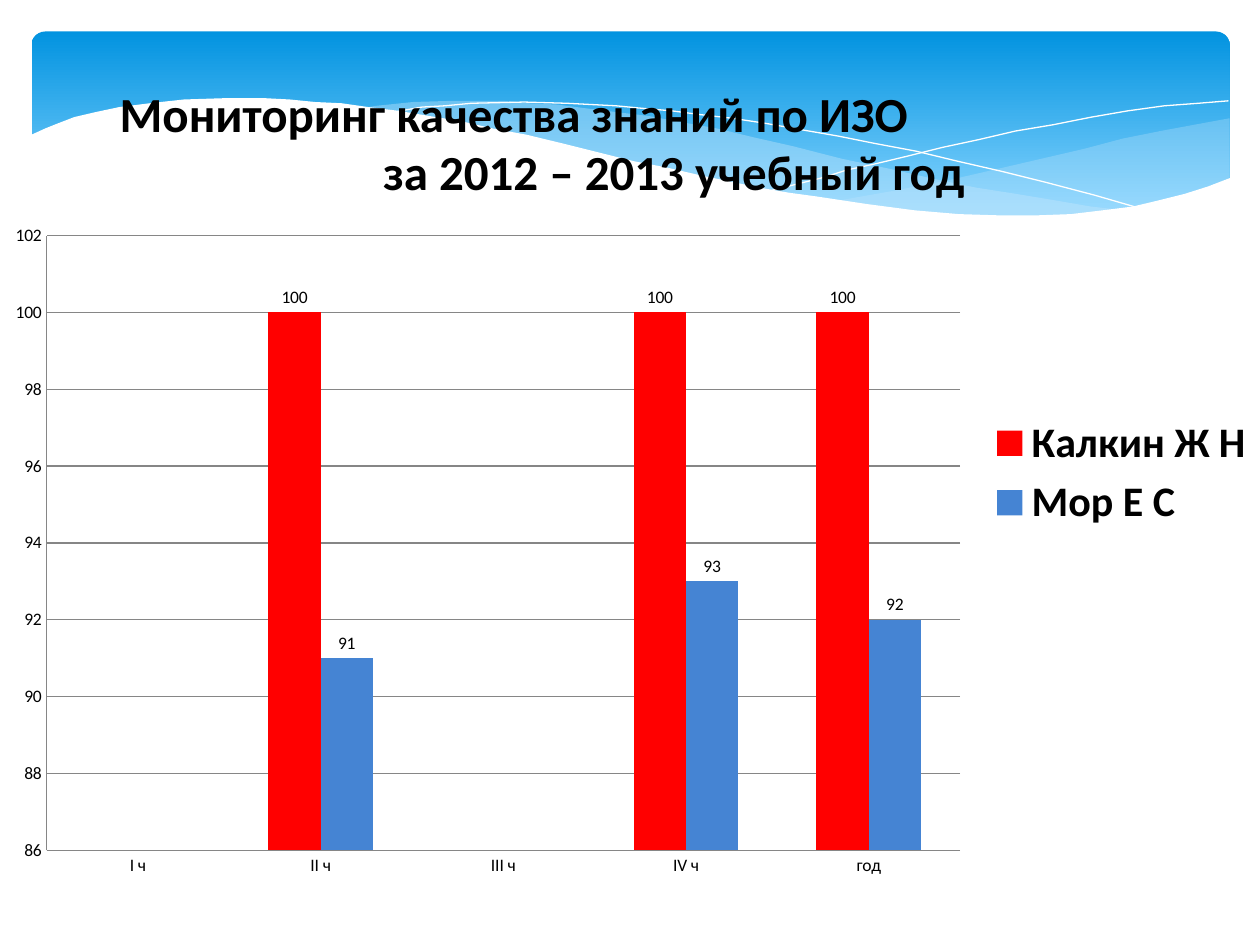
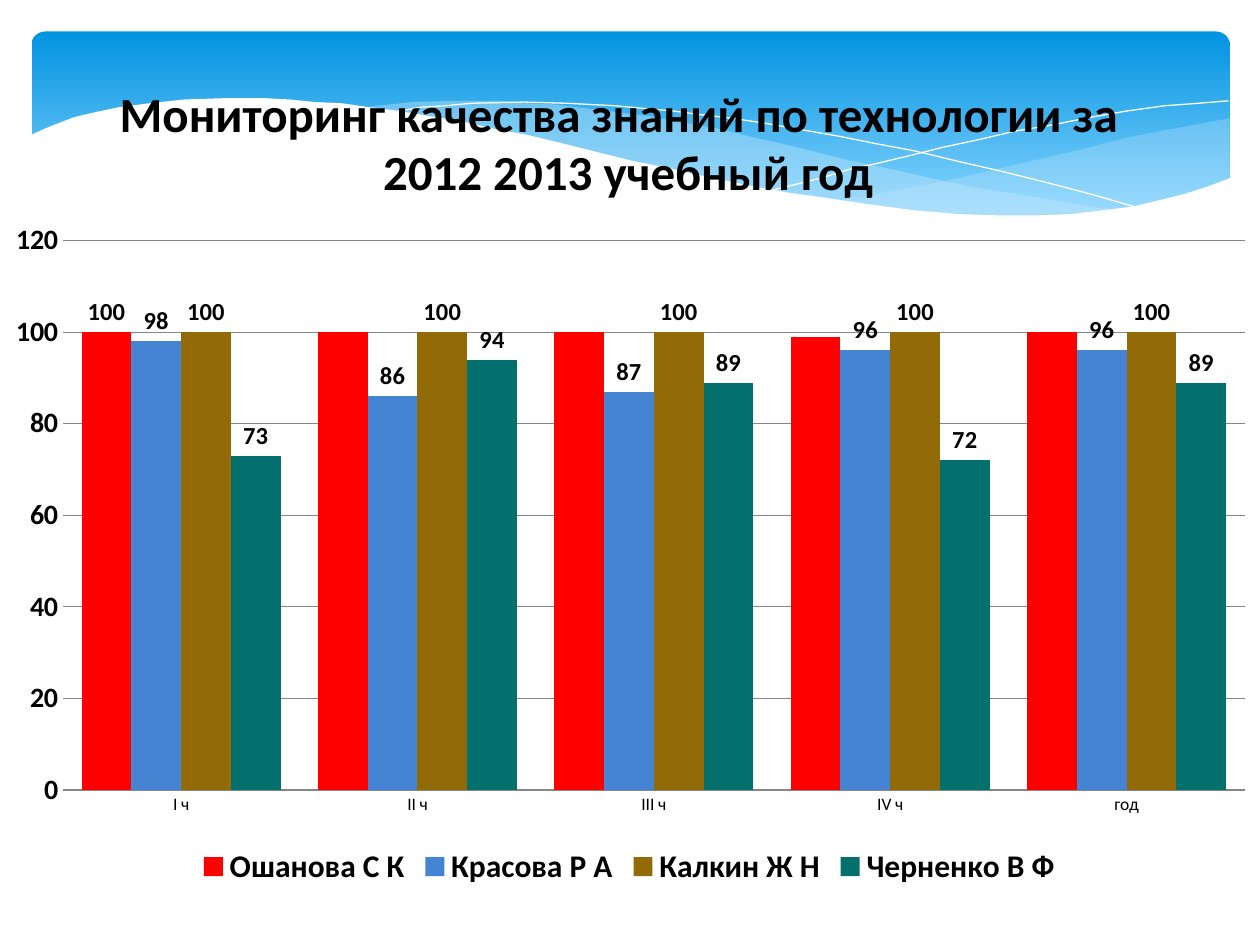
from dataclasses import dataclass

from lxml.etree import SubElement
from pptx import Presentation
from pptx.chart.data import CategoryChartData
from pptx.dml.color import RGBColor
from pptx.enum.chart import XL_CHART_TYPE, XL_LABEL_POSITION, XL_LEGEND_POSITION, XL_TICK_MARK
from pptx.enum.shapes import MSO_SHAPE
from pptx.oxml import parse_xml
from pptx.oxml.ns import nsdecls, qn
from pptx.util import Inches, Pt


@dataclass(frozen=True)
class Theme:
    """Colours, font and type sizes of the deck."""
    font: str = "Calibri"
    text: str = "000000"
    white: str = "FFFFFF"
    band_top: str = "0293E0"
    band_bottom: str = "83D3FE"
    ribbon: str = "C6E7FC"
    grid: str = "868686"
    red: str = "FF0000"
    blue: str = "4584D3"
    brown: str = "936A08"
    teal: str = "03706E"
    title_size: int = 28
    body_size: int = 10
    label_size: int = 14
    axis_size: int = 16


THEME = Theme()
QUARTERS = ["I ч", "II ч", "III ч", "IV ч", "год"]
CHART_BOX = (-0.09, 0.43, 10.17, 6.65)

RIGHT_RIBBON = [
    (9.75, 0.94), (9.48, 0.99), (9.21, 1.04), (8.91, 1.1), (8.61, 1.18), (8.05, 1.31),
    (7.53, 1.43), (7.06, 1.52), (6.61, 1.6), (6.91, 1.64), (7.19, 1.67), (7.45, 1.69),
    (7.69, 1.71), (7.92, 1.72), (8.35, 1.72), (8.63, 1.7), (8.89, 1.66), (9.13, 1.62),
    (9.35, 1.56), (9.63, 1.47), (9.76, 1.41), (9.76, 0.94),
]
LONG_RIBBON = [
    (8.93, 1.67), (8.66, 1.64), (8.37, 1.59), (8.07, 1.54), (7.75, 1.49), (7.41, 1.42),
    (7.06, 1.34), (6.68, 1.26), (6.29, 1.16), (5.98, 1.09), (5.69, 1.02), (5.41, 0.97),
    (5.14, 0.92), (4.89, 0.89), (4.65, 0.86), (4.42, 0.83), (4.2, 0.82), (3.99, 0.8),
    (3.61, 0.8), (3.28, 0.81), (2.99, 0.84), (2.86, 0.86), (3.23, 0.9), (3.62, 0.97),
    (4.04, 1.06), (4.49, 1.16), (4.91, 1.26), (5.3, 1.35), (5.66, 1.43), (6.01, 1.5),
    (6.34, 1.56), (6.65, 1.61), (6.95, 1.65), (7.22, 1.68), (7.48, 1.7), (7.73, 1.72),
    (7.96, 1.73), (8.28, 1.73), (8.57, 1.71), (8.76, 1.69),
]
FALLING_LINE = [
    (3.09, 0.9), (3.18, 0.88), (3.35, 0.85), (3.53, 0.84), (3.74, 0.82), (4.16, 0.81),
    (4.5, 0.82), (4.89, 0.84), (5.1, 0.86), (5.33, 0.88), (5.56, 0.91), (5.82, 0.94),
    (6.08, 0.98), (6.36, 1.03), (6.65, 1.08), (6.95, 1.14), (7.27, 1.2), (7.6, 1.28),
    (7.95, 1.36), (8.31, 1.45), (8.69, 1.55), (9.07, 1.66),
]
RISING_LINE = [
    (6.13, 1.51), (6.53, 1.41), (6.72, 1.35), (6.95, 1.3), (7.2, 1.24), (7.48, 1.17),
    (7.76, 1.11), (8.06, 1.04), (8.36, 0.99), (8.66, 0.93), (8.95, 0.88), (9.24, 0.84),
    (9.51, 0.82), (9.75, 0.8),
]
WHITE_WAVE = [
    (9.77, 1.41), (9.59, 1.48), (9.4, 1.54), (9.2, 1.59), (8.99, 1.64), (8.75, 1.67),
    (8.5, 1.7), (8.23, 1.71), (7.93, 1.71), (7.61, 1.7), (7.26, 1.67), (6.88, 1.62),
    (6.48, 1.56), (6.26, 1.53), (6.03, 1.49), (5.79, 1.44), (5.55, 1.39), (5.29, 1.33),
    (5.03, 1.28), (4.75, 1.21), (4.47, 1.14), (4.18, 1.07), (3.91, 1.02), (3.65, 0.96),
    (3.4, 0.92), (3.16, 0.88), (2.92, 0.85), (2.71, 0.82), (2.5, 0.81), (2.3, 0.79),
    (2.11, 0.78), (1.77, 0.78), (1.46, 0.79), (1.19, 0.82), (0.95, 0.85), (0.76, 0.89),
    (0.59, 0.93), (0.46, 0.98), (0.36, 1.02), (0.25, 1.07), (0.23, 1.07), (0.23, 2.24),
    (9.77, 2.24),
]


def color(value):
    """Turn a hex string into a colour."""
    return RGBColor.from_string(value)


def style_font(font, size, bold=False):
    """Apply the deck font in the text colour."""
    font.name = THEME.font
    font.size = Pt(size)
    font.bold = bold
    font.color.rgb = color(THEME.text)


def add_outline(page, points, closed):
    """Draw an outline through points given in inches."""
    start, *rest = [(Inches(x), Inches(y)) for x, y in points]
    builder = page.shapes.build_freeform(*start)
    builder.add_line_segments(rest, close=closed)
    outline = builder.convert_to_shape()
    outline.shadow.inherit = False
    return outline


def add_area(page, points, fill, opacity=100):
    """Draw a filled outline without a border."""
    area = add_outline(page, points, True)
    area.fill.solid()
    area.fill.fore_color.rgb = color(fill)
    area.line.fill.background()
    if opacity < 100:
        tone = area.element.spPr.find(qn("a:solidFill")).find(qn("a:srgbClr"))
        SubElement(tone, qn("a:alpha")).set("val", str(opacity * 1000))


def add_hairline(page, points):
    """Draw a thin white curve."""
    curve = add_outline(page, points, False)
    curve.fill.background()
    curve.line.color.rgb = color(THEME.white)
    curve.line.width = Pt(0)


def add_band(page):
    """Draw the blue header band with its waves."""
    box = (Inches(value) for value in (0.25, 0.25, 9.51, 1.56))
    band = page.shapes.add_shape(MSO_SHAPE.ROUNDED_RECTANGLE, *box)
    band.adjustments[0] = 0.07
    band.shadow.inherit = False
    band.line.fill.background()
    band.fill.gradient()
    band.fill.gradient_angle = 270
    stops = ((0, THEME.band_top), (0.9, THEME.band_bottom))
    for stop, (position, tone) in zip(band.fill.gradient_stops, stops):
        stop.position = position
        stop.color.rgb = color(tone)
    add_area(page, RIGHT_RIBBON, THEME.ribbon, 29)
    add_area(page, LONG_RIBBON, THEME.ribbon, 40)
    add_hairline(page, FALLING_LINE)
    add_hairline(page, RISING_LINE)
    add_area(page, WHITE_WAVE, THEME.white)


def add_title(page, lines):
    """Write the title with its second line indented."""
    box = page.shapes.add_textbox(Inches(0.95), Inches(0.66), Inches(8.6), Inches(0.95))
    frame = box.text_frame
    frame.word_wrap = True
    frame.margin_left = frame.margin_right = frame.margin_top = frame.margin_bottom = 0
    frame.text = "\n".join(lines)
    for paragraph, indent in zip(frame.paragraphs, (0, 2.09)):
        paragraph._p.get_or_add_pPr().set("marL", str(Inches(indent)))
        for span in paragraph.runs:
            style_font(span.font, THEME.title_size, True)


def place_plot(chart, plot_box):
    """Fix the inner plot area at a page rectangle in inches."""
    left, top, width, height = CHART_BOX
    x, y, w, h = plot_box
    shares = {"x": (x - left) / width, "y": (y - top) / height, "w": w / width, "h": h / height}
    values = "".join(f'<c:{key} val="{share:.4f}"/>' for key, share in shares.items())
    layout = parse_xml(
        f'<c:layout {nsdecls("c")}><c:manualLayout><c:layoutTarget val="inner"/>'
        f'<c:xMode val="edge"/><c:yMode val="edge"/>{values}</c:manualLayout></c:layout>')
    area = chart._chartSpace.chart.plotArea
    for old in area.findall(qn("c:layout")):
        area.remove(old)
    area.insert(0, layout)


def style_axes(chart, scale, size, bold, line):
    """Set the scale, grid and type of both axes."""
    values, categories = chart.value_axis, chart.category_axis
    values.minimum_scale, values.maximum_scale, values.major_unit = scale
    values.has_major_gridlines = True
    values.major_gridlines.format.line.color.rgb = color(THEME.grid)
    for axis in (values, categories):
        axis.major_tick_mark = axis.minor_tick_mark = XL_TICK_MARK.NONE
        axis.format.line.color.rgb = color(THEME.grid)
    if not line:
        values.format.line.fill.background()
    style_font(values.tick_labels.font, size, bold)
    style_font(categories.tick_labels.font, THEME.body_size)


def style_labels(series, size, bold, first_only):
    """Show values above the columns, or above the first one only."""
    labels = series.data_labels
    labels.show_value = not first_only
    target = series.points[0].data_label if first_only else labels
    style_font(target.font, size, bold)
    target.position = XL_LABEL_POSITION.OUTSIDE_END


def add_column_chart(page, columns, plot_box, scale, gap, legend, legend_size,
                     label_size=THEME.body_size, axis_size=THEME.body_size, bold=False,
                     axis_line=True, first_only=()):
    """Add a clustered column chart of marks by quarter."""
    data = CategoryChartData()
    data.categories = QUARTERS
    for name, tone, marks in columns:
        data.add_series(name, marks)
    box = (Inches(value) for value in CHART_BOX)
    chart = page.shapes.add_chart(XL_CHART_TYPE.COLUMN_CLUSTERED, *box, data).chart
    chart.has_title = False
    style_font(chart.font, THEME.body_size)
    plot = chart.plots[0]
    plot.gap_width, plot.overlap, plot.vary_by_categories = gap, 0, False
    for series, (name, tone, marks) in zip(plot.series, columns):
        series.format.fill.solid()
        series.format.fill.fore_color.rgb = color(tone)
        style_labels(series, label_size, bold, name in first_only)
    style_axes(chart, scale, axis_size, bold, axis_line)
    chart.has_legend = True
    chart.legend.position = legend
    chart.legend.include_in_layout = False
    style_font(chart.legend.font, legend_size, True)
    place_plot(chart, plot_box)


def add_page(deck):
    """Add a blank page with the header band."""
    page = deck.slides.add_slide(deck.slide_layouts[6])
    add_band(page)
    return page


def main():
    """Build the two monitoring pages."""
    deck = Presentation()
    deck.slide_width, deck.slide_height = Inches(10), Inches(7.5)

    art = add_page(deck)
    add_column_chart(
        art,
        [("Калкин Ж Н", THEME.red, (None, 100, None, 100, 100)),
         ("Мор Е С", THEME.blue, (None, 91, None, 93, 92))],
        plot_box=(0.37, 1.87, 7.25, 4.88), scale=(86, 102, 2), gap=150,
        legend=XL_LEGEND_POSITION.RIGHT, legend_size=24)
    add_title(art, ["Мониторинг качества знаний по ИЗО", "за 2012 – 2013 учебный год"])

    technology = add_page(deck)
    add_column_chart(
        technology,
        [("Ошанова С К", THEME.red, (100, 100, 100, 99, 100)),
         ("Красова Р А", THEME.blue, (98, 86, 87, 96, 96)),
         ("Калкин Ж Н", THEME.brown, (100, 100, 100, 100, 100)),
         ("Черненко В Ф", THEME.teal, (73, 94, 89, 72, 89))],
        plot_box=(0.5, 1.91, 9.38, 4.36), scale=(0, 120, 20), gap=75,
        legend=XL_LEGEND_POSITION.BOTTOM, legend_size=18,
        label_size=THEME.label_size, axis_size=THEME.axis_size, bold=True,
        axis_line=False, first_only=("Ошанова С К",))
    add_title(technology, ["Мониторинг качества знаний по технологии за", "2012 2013 учебный год"])

    deck.save("out.pptx")


if __name__ == "__main__":
    main()
